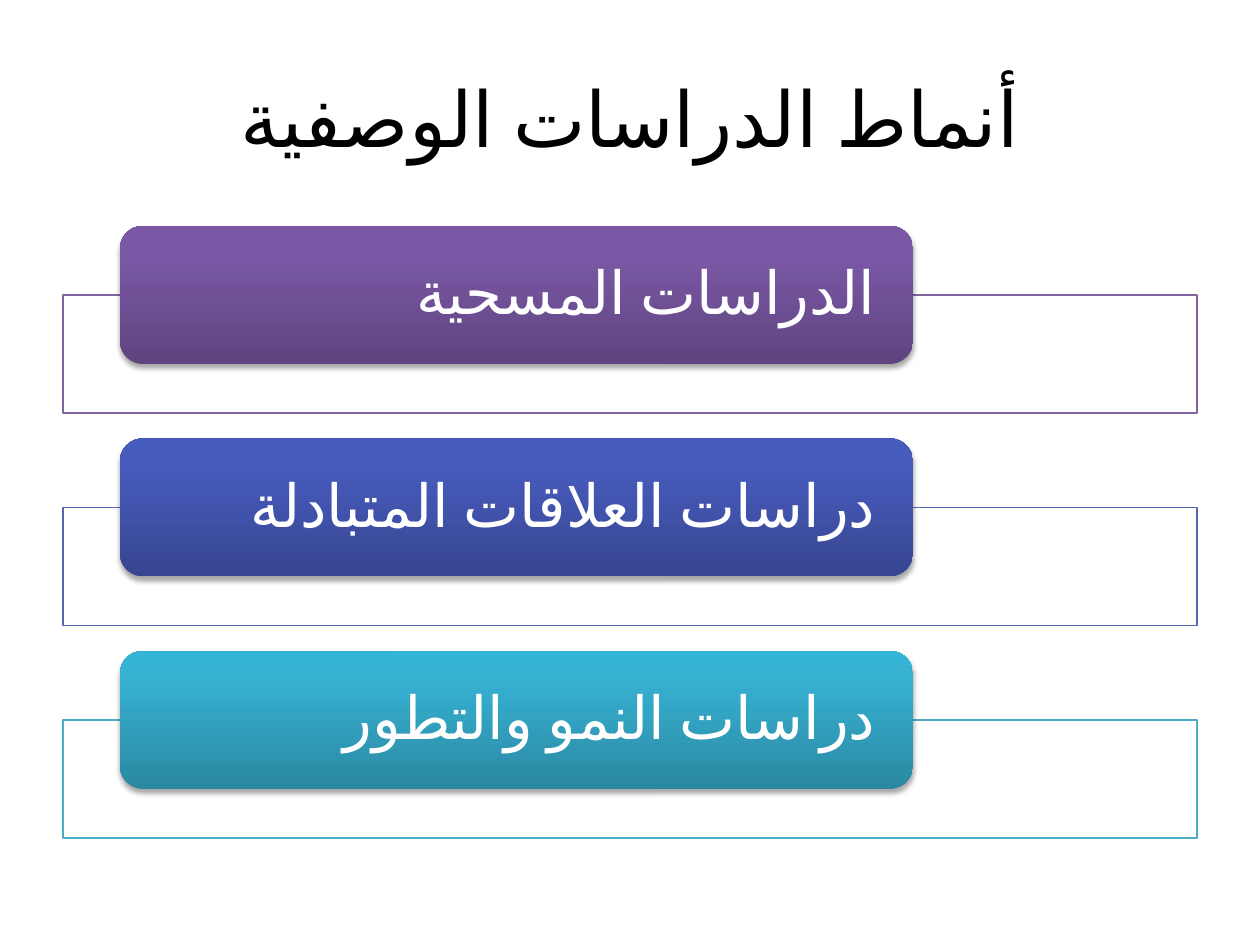
from copy import deepcopy

from lxml import etree
from pptx import Presentation
from pptx.dml.color import RGBColor
from pptx.enum.lang import MSO_LANGUAGE_ID
from pptx.enum.shapes import MSO_SHAPE
from pptx.enum.text import MSO_ANCHOR, PP_ALIGN
from pptx.oxml.ns import qn
from pptx.util import Emu, Pt

ARABIC = MSO_LANGUAGE_ID.ARABIC
RECTANGLE = MSO_SHAPE.RECTANGLE
ROUNDED = MSO_SHAPE.ROUNDED_RECTANGLE
MIDDLE = MSO_ANCHOR.MIDDLE
CENTER, RIGHT = PP_ALIGN.CENTER, PP_ALIGN.RIGHT

PX = 914400 / 126
FONT = "Calibri"
BLACK = RGBColor(0x00, 0x00, 0x00)
WHITE = RGBColor(0xFF, 0xFF, 0xFF)
PURPLE = RGBColor(0x80, 0x64, 0xA2)
BLUE = RGBColor(0x57, 0x67, 0xB4)
TEAL = RGBColor(0x4B, 0xAC, 0xC6)
PURPLE_SHADES = (RGBColor(0x5F, 0x44, 0x80), RGBColor(0x7B, 0x58, 0xA6), RGBColor(0x7C, 0x57, 0xA8))
BLUE_SHADES = (RGBColor(0x37, 0x46, 0x91), RGBColor(0x47, 0x5B, 0xBC), RGBColor(0x45, 0x5A, 0xBF))
TEAL_SHADES = (RGBColor(0x2A, 0x88, 0xA2), RGBColor(0x37, 0xB1, 0xD2), RGBColor(0x34, 0xB4, 0xD6))
SHADE_STOPS = (0, 0.8, 1)

# Label, frame colour, gradient from bottom to top
STUDY_TYPES = (
    ("الدراسات المسحية", PURPLE, PURPLE_SHADES),
    ("دراسات العلاقات المتبادلة", BLUE, BLUE_SHADES),
    ("دراسات النمو والتطور", TEAL, TEAL_SHADES),
)
# Tops of the first and last row
FIRST_TOP, LAST_TOP = 226, 651
ROW_STEP = (LAST_TOP - FIRST_TOP) / (len(STUDY_TYPES) - 1)


def px(*lengths):
    return [Emu(round(length * PX)) for length in lengths]


def add_text(page, text, place, *, size, color, align, margin=0, line_spacing=1.0):
    box = page.shapes.add_textbox(*px(*place))
    frame = box.text_frame
    frame.word_wrap = True
    frame.vertical_anchor = MIDDLE
    frame.margin_left, frame.margin_right = px(margin, margin)
    frame.margin_top = frame.margin_bottom = 0
    para = frame.paragraphs[0]
    para.alignment = align
    para.line_spacing = line_spacing
    para._p.get_or_add_pPr().set("rtl", "1")
    span = para.add_run()
    span.text = text
    span.font.size = Pt(size)
    span.font.name = FONT
    span.font.language_id = ARABIC
    span.font.color.rgb = color


def add_frame(page, place, color):
    frame = page.shapes.add_shape(RECTANGLE, *px(*place))
    frame.shadow.inherit = False
    frame.fill.solid()
    frame.fill.fore_color.rgb = WHITE
    tint = frame._element.spPr.find(qn("a:solidFill"))[0]
    etree.SubElement(tint, qn("a:alpha"), val="90000")
    frame.line.color.rgb = color
    frame.line.width = Pt(0.75)


def add_soft_shadow(shape):
    shape.shadow.inherit = False
    effects = shape._element.spPr.find(qn("a:effectLst"))
    shadow = etree.SubElement(effects, qn("a:outerShdw"), blurRad=str(Pt(3.1)),
                              dist=str(Pt(1.8)), dir="5400000", rotWithShape="0")
    tint = etree.SubElement(shadow, qn("a:srgbClr"), val="000000")
    etree.SubElement(tint, qn("a:alpha"), val="35000")


def add_pill(page, place, shades):
    pill = page.shapes.add_shape(ROUNDED, *px(*place))
    pill.line.fill.background()
    pill.fill.gradient()
    pill.fill.gradient_angle = 90
    # The default gradient has two stops; a third is needed
    stop_list = pill._element.spPr.find(".//" + qn("a:gsLst"))
    stop_list.append(deepcopy(stop_list[-1]))
    for stop, position, shade in zip(pill.fill.gradient_stops, SHADE_STOPS, shades):
        stop.position = position
        stop.color.rgb = shade
    add_soft_shadow(pill)


def add_study_type(page, top, label, color, shades):
    add_frame(page, (63, top + 69, 1134, 118), color)
    add_pill(page, (120, top, 793, 138), shades)
    add_text(page, label, (126, top + 7, 780, 125), size=34, color=WHITE,
             align=RIGHT, margin=30, line_spacing=0.9)


def main():
    deck = Presentation()
    deck.slide_width, deck.slide_height = px(1260, 945)
    page = deck.slides.add_slide(deck.slide_layouts[6])

    # Title
    add_text(page, "أنماط الدراسات الوصفية", (63, 38, 1134, 157),
             size=44, color=BLACK, align=CENTER, margin=13)

    # One row for each type of study
    for row, (label, color, shades) in enumerate(STUDY_TYPES):
        add_study_type(page, FIRST_TOP + row * ROW_STEP, label, color, shades)

    deck.save("out.pptx")


if __name__ == "__main__":
    main()
